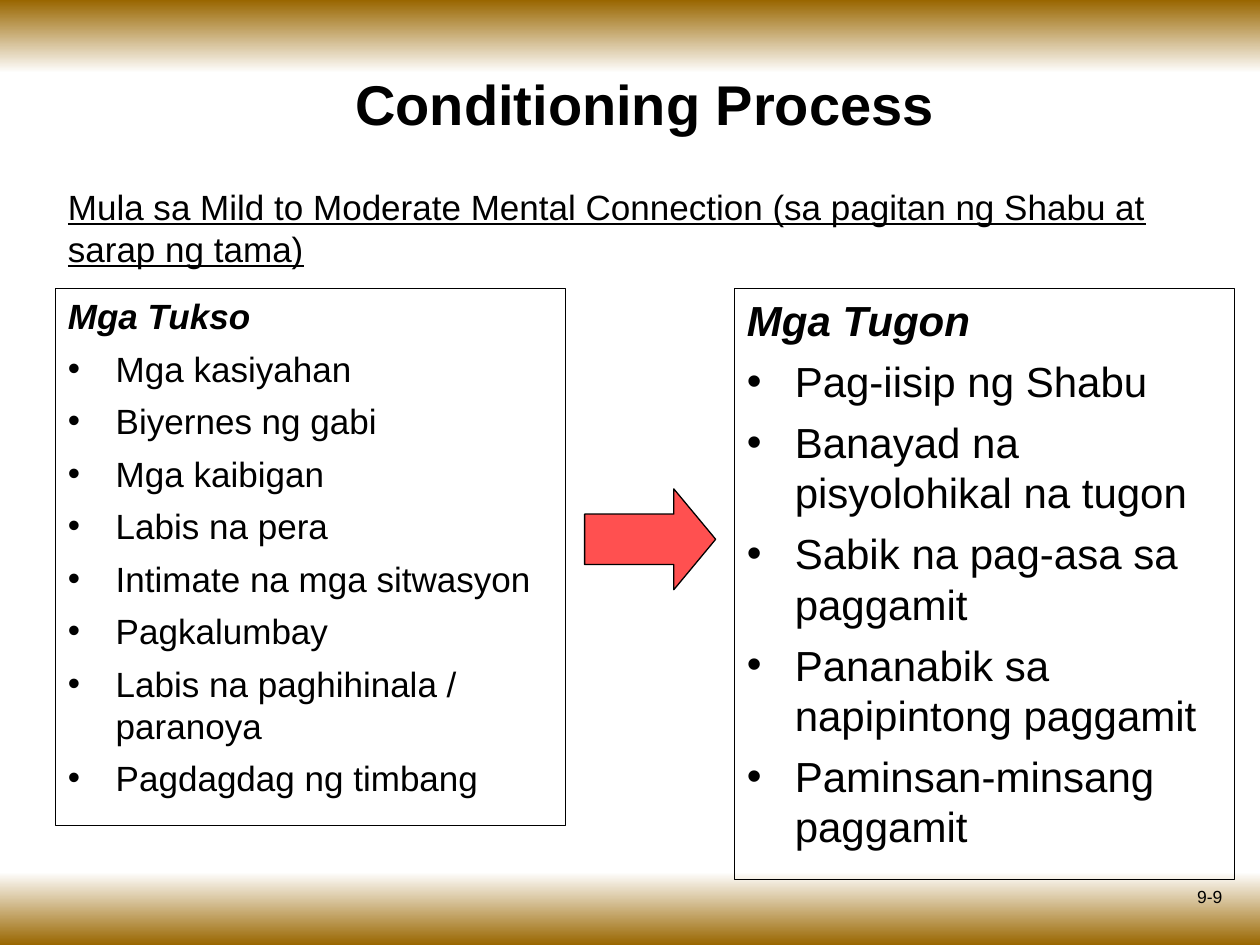
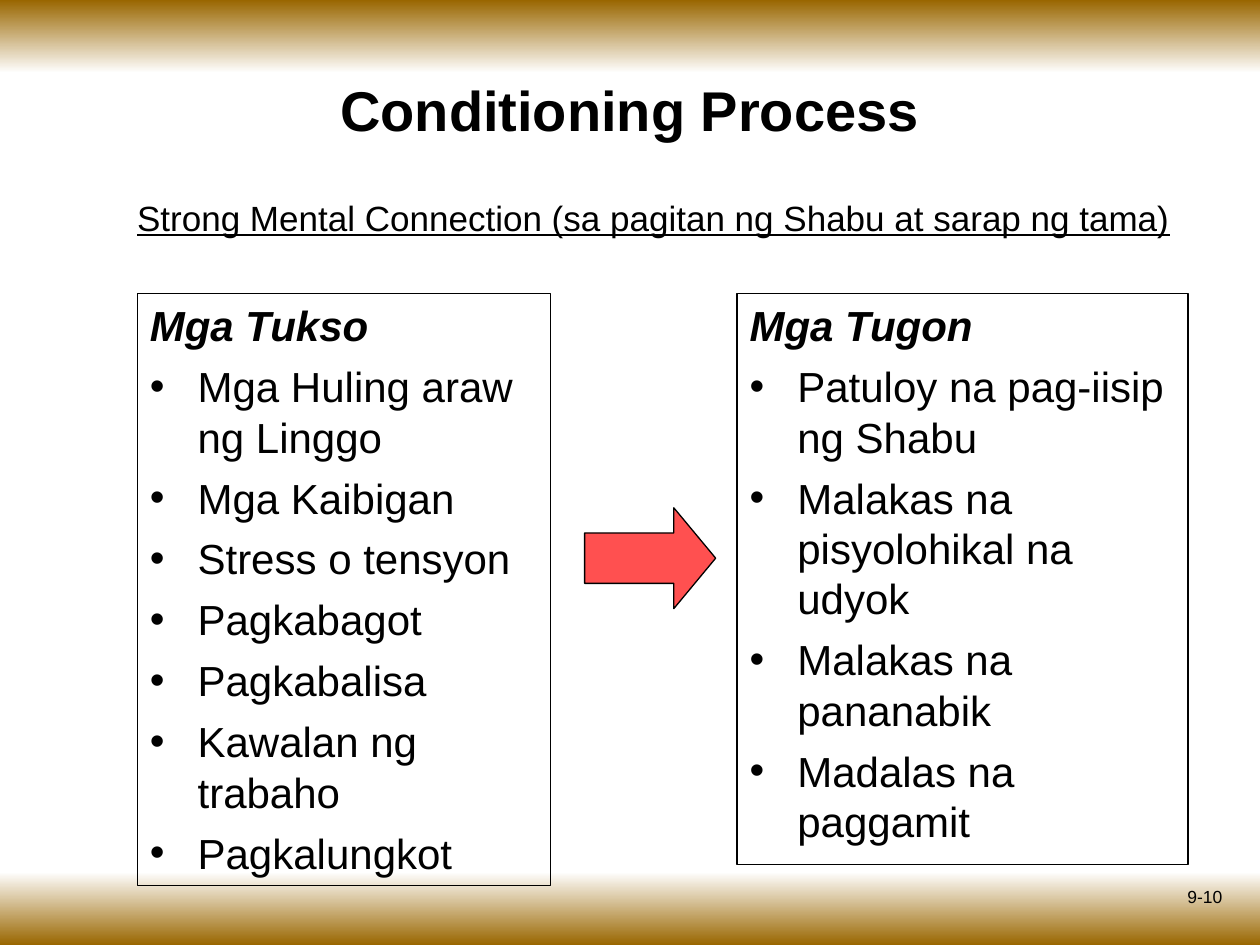
from lxml import etree
from pptx import Presentation
from pptx.dml.color import RGBColor
from pptx.enum.shapes import MSO_SHAPE as SHAPE
from pptx.enum.text import MSO_ANCHOR as ANCHOR, MSO_AUTO_SIZE as FIT, PP_ALIGN as ALIGN
from pptx.oxml.ns import qn
from pptx.util import Inches, Pt

BLACK, WHITE, BROWN, RED = "000000", "FFFFFF", "996600", "FF5050"
BAND = 7.73
INDENT = Inches(0.38)

prs = Presentation()
prs.slide_width, prs.slide_height = Inches(10), Inches(7.5)
COL, ROW = prs.slide_width / 100, prs.slide_height / 100


def box(left, top, width, height):
    return [int(n) for n in (left * COL, top * ROW, width * COL, height * ROW)]


def write(sp, lines, size, align=ALIGN.LEFT, bold=False, underline=False):
    tf = sp.text_frame
    tf.text = "\n".join(lines)
    tf.word_wrap = True
    tf.auto_size = FIT.NONE
    tf.vertical_anchor = ANCHOR.TOP
    for p in tf.paragraphs:
        p.alignment = align
        for r in p.runs:
            r.font.name = "Arial"
            r.font.size = Pt(size)
            r.font.bold = bold
            r.font.underline = underline
            r.font.color.rgb = RGBColor.from_string(BLACK)


pages = [
    dict(
        number="9-9",
        title_at=(4.4, 6.67, 93.6, 8.53),
        subtitle="Mula sa Mild to Moderate Mental Connection (sa pagitan ng Shabu at sarap ng tama)",
        subtitle_at=(4.4, 18.93, 90.8, 10.27),
        arrow_top=51.73,
        lists=[
            ((4.4, 30.53, 40.5, 56.8), 20,
             ["Mga Tukso", "Mga kasiyahan", "Biyernes ng gabi", "Mga kaibigan",
              "Labis na pera", "Intimate na mga sitwasyon", "Pagkalumbay",
              "Labis na paghihinala / paranoya", "Pagdagdag ng timbang"]),
            ((58.3, 30.53, 39.7, 62.53), 24,
             ["Mga Tugon", "Pag-iisip ng Shabu", "Banayad na pisyolohikal na tugon",
              "Sabik na pag-asa sa paggamit", "Pananabik sa napipintong paggamit",
              "Paminsan-minsang paggamit"]),
        ],
    ),
    dict(
        number="9-10",
        title_at=(8.8, 7.33, 82.4, 8.53),
        subtitle="Strong Mental Connection (sa pagitan ng Shabu at sarap ng tama)",
        subtitle_at=(9.9, 20.13, 84.4, 5.87),
        arrow_top=53.73,
        lists=[
            ((10.9, 31.07, 32.8, 62.67), 24,
             ["Mga Tukso", "Mga Huling araw ng Linggo", "Mga Kaibigan",
              "Stress o tensyon", "Pagkabagot", "Pagkabalisa",
              "Kawalan ng trabaho", "Pagkalungkot"]),
            ((58.5, 31.07, 35.8, 60.4), 24,
             ["Mga Tugon", "Patuloy na pag-iisip ng Shabu",
              "Malakas na pisyolohikal na udyok", "Malakas na pananabik",
              "Madalas na paggamit"]),
        ],
    ),
]

layout = prs.slide_layouts[5]
slides = [prs.slides.add_slide(layout) for page in pages]

for i, (top, colors) in enumerate([(0, (BROWN, WHITE)), (100 - BAND, (WHITE, BROWN))]):
    band = slides[0].shapes.add_shape(SHAPE.RECTANGLE, *box(0, top, 100, BAND))
    band.shadow.inherit = False
    band.line.fill.background()
    band.fill.gradient()
    band.fill.gradient_angle = 270
    for stop, color, position in zip(band.fill.gradient_stops, colors, (0, 1)):
        stop.color.rgb = RGBColor.from_string(color)
        stop.position = position
    band.element.nvSpPr.cNvPr.id = 20 + i
    layout.shapes.element.insert(2 + i, band.element)

for s, page in zip(slides, pages):
    title = s.shapes.title
    title.left, title.top, title.width, title.height = box(*page["title_at"])
    write(title, ["Conditioning Process"], 32, ALIGN.CENTER, bold=True)

    number = s.shapes.add_textbox(*box(74.7, 93.07, 23.3, 6.93))
    write(number, [page["number"]], 10, ALIGN.RIGHT)
    subtitle = s.shapes.add_textbox(*box(*page["subtitle_at"]))
    write(subtitle, [page["subtitle"]], 20, underline=True)

    for at, size, lines in page["lists"]:
        sp = s.shapes.add_shape(SHAPE.RECTANGLE, *box(*at))
        sp.shadow.inherit = False
        sp.fill.background()
        sp.line.color.rgb = RGBColor.from_string(BLACK)
        sp.line.width = Pt(0.75)
        write(sp, lines, size)
        heading, *items = sp.text_frame.paragraphs
        heading.runs[0].font.bold = heading.runs[0].font.italic = True
        for p in items:
            p.space_before = Pt(6)
            pPr = p._p.get_or_add_pPr()
            pPr.set("marL", str(INDENT))
            pPr.set("indent", str(-INDENT))
            etree.SubElement(pPr, qn("a:buFont")).set("typeface", "Arial")
            etree.SubElement(pPr, qn("a:buChar")).set("char", "•")

    arrow = s.shapes.add_shape(SHAPE.RIGHT_ARROW, *box(46.4, page["arrow_top"], 10.4, 10.67))
    arrow.adjustments[1] = 0.415
    arrow.shadow.inherit = False
    arrow.fill.solid()
    arrow.fill.fore_color.rgb = RGBColor.from_string(RED)
    arrow.line.color.rgb = RGBColor.from_string(BLACK)
    arrow.line.width = Pt(0.75)

prs.save("out.pptx")
